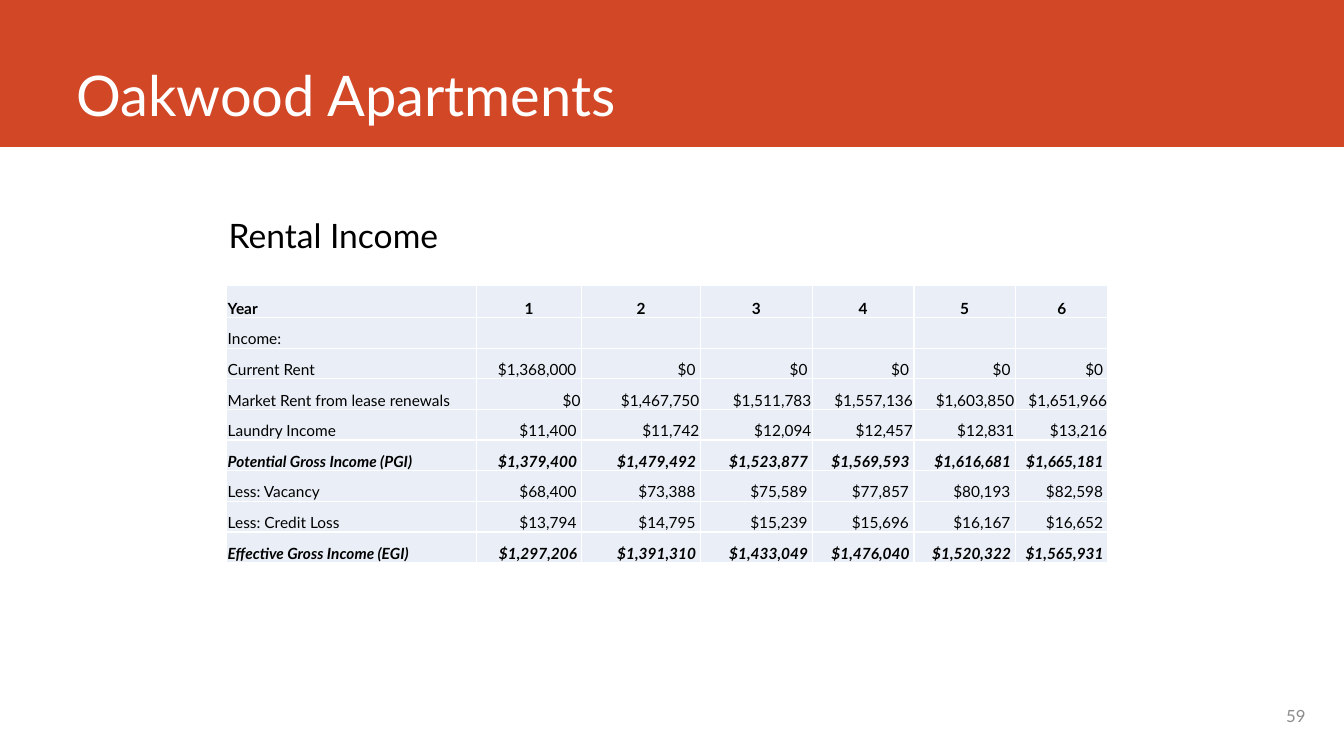
from dataclasses import dataclass

from lxml.etree import SubElement
from pptx import Presentation
from pptx.dml.color import RGBColor as RGB
from pptx.enum.shapes import MSO_SHAPE as Shape
from pptx.enum.text import MSO_ANCHOR as Anchor, PP_ALIGN as Align
from pptx.oxml.ns import qn
from pptx.util import Pt


@dataclass(frozen=True)
class Theme:
    font: str = "Lato"
    band: str = "D24726"
    white: str = "FFFFFF"
    black: str = "000000"
    gray: str = "8C8C8C"
    cell: str = "EAEFF7"
    title: float = 40
    head: float = 24
    page: float = 12
    body: float = 11


THEME = Theme()
COLS = [178.4, 75, 85, 80, 72.5, 72.5, 66.2]
ROWS = [22.8] + [21.9] * 8
YEARS = range(1, 7)
NONE = len(COLS)

# Label, yearly amounts, bold italic, first column set flush right
INCOME = [
    ("Current Rent", [1368000, 0, 0, 0, 0, 0], False, NONE),
    ("Market Rent from lease renewals",
     [0, 1467750, 1511783, 1557136, 1603850, 1651966], False, 1),
    ("Laundry Income", [11400, 11742, 12094, 12457, 12831, 13216], False, 2),
    ("Potential Gross Income (PGI)",
     [1379400, 1479492, 1523877, 1569593, 1616681, 1665181], True, NONE),
    ("Less: Vacancy", [68400, 73388, 75589, 77857, 80193, 82598], False, NONE),
    ("Less: Credit Loss",
     [13794, 14795, 15239, 15696, 16167, 16652], False, NONE),
    ("Effective Gross Income (EGI)",
     [1297206, 1391310, 1433049, 1476040, 1520322, 1565931], True, NONE),
]


def assign(item, values):
    for name, value in values.items():
        setattr(item, name, value)


def paint(fill, color):
    fill.solid()
    fill.fore_color.rgb = RGB.from_string(color)


def write(frame, text, size, color, align=Align.LEFT, **style):
    para = frame.paragraphs[0]
    para.alignment = align
    if not text:
        # Keeps an empty cell from growing to the default type size
        SubElement(para._p, qn("a:endParaRPr"), sz=str(int(size * 100)))
        return
    run = para.add_run()
    run.text = text
    assign(run.font, {"name": THEME.font, "size": Pt(size), **style})
    run.font.color.rgb = RGB.from_string(color)


def add_band(slide, width, height):
    band = slide.shapes.add_shape(Shape.RECTANGLE, 0, 0, width, height)
    band.shadow.inherit = False
    paint(band.fill, THEME.band)
    band.line.fill.background()


def add_text(slide, box, text, size, color, anchor=Anchor.TOP,
             align=Align.LEFT, wrap=True):
    frame = slide.shapes.add_textbox(*map(Pt, box)).text_frame
    assign(frame, {"word_wrap": wrap, "vertical_anchor": anchor})
    write(frame, text, size, color, align)


def edge(cell):
    """Draw a thin white border on all four sides."""
    props = cell._tc.get_or_add_tcPr()
    for place, side in enumerate(("lnL", "lnR", "lnT", "lnB")):
        line = props.makeelement(qn(f"a:{side}"), {"w": str(int(Pt(1)))})
        props.insert(place, line)
        fill = SubElement(line, qn("a:solidFill"))
        SubElement(fill, qn("a:srgbClr"), val=THEME.white)


def fill_row(table, row, texts, align, **style):
    for col, text in enumerate(texts):
        cell = table.cell(row, col)
        assign(cell, {
            "margin_left": Pt(0.7), "margin_right": Pt(0.7),
            "margin_top": Pt(0.7), "margin_bottom": 0,
            "vertical_anchor": Anchor.BOTTOM,
        })
        paint(cell.fill, THEME.cell)
        edge(cell)
        write(cell.text_frame, text, THEME.body, THEME.black,
              align if col else Align.LEFT, **style)


def money(value, flush):
    return f"${value:,}" + ("" if flush else " ")


def add_income(slide, left, top):
    table = slide.shapes.add_table(
        len(ROWS), len(COLS), Pt(left), Pt(top),
        Pt(sum(COLS)), Pt(sum(ROWS))).table
    assign(table, {"first_row": False, "horz_banding": False})
    for col, width in zip(table.columns, COLS):
        col.width = Pt(width)
    for row, height in zip(table.rows, ROWS):
        row.height = Pt(height)

    fill_row(table, 0, ["Year", *map(str, YEARS)], Align.CENTER, bold=True)
    fill_row(table, 1, ["Income:"] + [""] * len(YEARS), Align.RIGHT)
    for row, (label, sums, total, flush) in enumerate(INCOME, 2):
        cells = [money(n, col >= flush) for col, n in enumerate(sums, 1)]
        fill_row(table, row, [label, *cells], Align.RIGHT,
                 bold=total, italic=total)


def main():
    deck = Presentation()
    assign(deck, {"slide_width": Pt(960), "slide_height": Pt(540)})
    slide = deck.slides.add_slide(deck.slide_layouts[6])
    add_band(slide, deck.slide_width, Pt(105))
    add_text(slide, (47.5, 0, 846.7, 95), "Oakwood Apartments",
             THEME.title, THEME.white, Anchor.BOTTOM)
    add_income(slide, 162, 204)
    add_text(slide, (681.8, 496.8, 257.8, 28.8), "59", THEME.page,
             THEME.gray, Anchor.MIDDLE, Align.RIGHT)
    add_text(slide, (156.2, 150, 167, 36), "Rental Income",
             THEME.head, THEME.black, wrap=False)
    deck.save("out.pptx")


if __name__ == "__main__":
    main()
